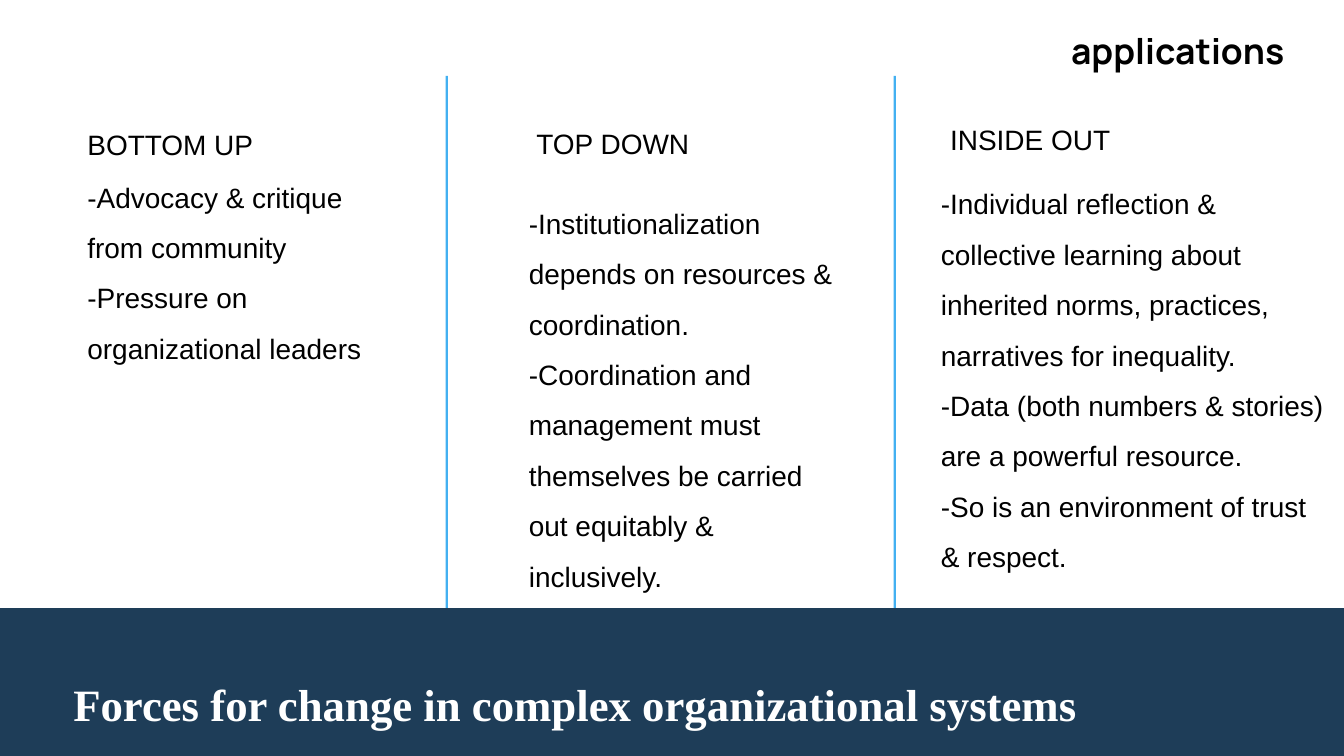
from dataclasses import dataclass
from pptx import Presentation
from pptx.dml.color import RGBColor as Rgb
from pptx.enum.shapes import MSO_SHAPE as Kind
from pptx.enum.text import MSO_ANCHOR as Anchor, MSO_AUTO_SIZE as Fit
from pptx.util import Pt


@dataclass(frozen=True)
class Theme:
    """Colours, fonts and type sizes of the deck."""
    black: Rgb = Rgb.from_string("000000")
    white: Rgb = Rgb.from_string("FFFFFF")
    navy: Rgb = Rgb.from_string("1E3D58")
    sky: Rgb = Rgb.from_string("43B0F1")
    sans: str = "Arial"
    serif: str = "Times New Roman"
    label: str = "Manrope"
    body: int = 30
    tag: int = 38
    title: int = 48


THEME = Theme()
WIDE, HIGH = 1440, 810
RULE_TOP, BAND_TOP = 81.4, 651.6
COLUMNS = [
    ((93.6, 118.8, 332.6), (0, 56.2, 200), "BOTTOM UP",
     ["-Advocacy & critique from community",
      "-Pressure on organizational leaders"]),
    ((566.6, 118.1, 332.6), (8, 84.9, 418.3), "TOP DOWN",
     ["-Institutionalization depends on resources & coordination.",
      "-Coordination and management must themselves be carried out "
      "equitably & inclusively."]),
    ((1008, 113, 414), (10, 69.2, 418.3), "INSIDE OUT",
     ["-Individual reflection & collective learning about inherited norms, "
      "practices, narratives for inequality.",
      "-Data (both numbers & stories) are a powerful resource.",
      "-So is an environment of trust & respect."]),
]


def add_text(slide, box, lines, font, space=1.5, inset=(0, 0), fit=Fit.SHAPE_TO_FIT_TEXT):
    """Place paragraphs that share one font in a wrapped box."""
    frame = slide.shapes.add_textbox(*map(Pt, box)).text_frame
    side, edge = map(Pt, inset)
    look = dict(word_wrap=True, auto_size=fit, vertical_anchor=Anchor.TOP,
                margin_left=side, margin_right=side,
                margin_top=edge, margin_bottom=edge)
    for name, value in look.items():
        setattr(frame, name, value)
    frame.text = "\n".join(lines)
    name, size, color, bold = font
    for para in frame.paragraphs:
        para.line_spacing = space
        for key, value in dict(name=name, size=Pt(size), bold=bold).items():
            setattr(para.font, key, value)
        para.font.color.rgb = color


def add_block(slide, box, color):
    """Place a plain filled rectangle."""
    block = slide.shapes.add_shape(Kind.RECTANGLE, *map(Pt, box))
    block.shadow.inherit = False
    block.fill.solid()
    block.fill.fore_color.rgb = color
    block.line.fill.background()


def add_column(slide, box, shift, head, lines):
    """Place a heading and the points below it."""
    left, top, wide = box
    indent, drop, tall = shift
    font = THEME.sans, THEME.body, THEME.black, False
    add_text(slide, (left + indent, top, 332.6, 36), [head], font)
    add_text(slide, (left, top + drop, wide, tall), lines, font)


def add_rules(slide, top, bottom):
    """Divide the slide into three equal columns."""
    for part in (1, 2):
        add_block(slide, (WIDE * part / 3 - 2.6, top, 2.6, bottom - top), THEME.sky)


def add_band(slide, box):
    """Place the title band at the foot of the slide."""
    left, top, wide, tall = box
    add_block(slide, box, THEME.navy)
    add_text(slide, (left + 78.5, top + 23, 1316.9, 58.3),
             ["Forces for change in complex organizational systems"],
             (THEME.serif, THEME.title, THEME.white, True), 1.88)


def add_tag(slide, box):
    """Place the section label."""
    add_text(slide, box, ["applications"],
             (THEME.label, THEME.tag, THEME.black, True), 1, (7.2, 3.6), Fit.NONE)


def main():
    """Build and save the slide."""
    deck = Presentation()
    deck.slide_width, deck.slide_height = Pt(WIDE), Pt(HIGH)
    slide = deck.slides.add_slide(deck.slide_layouts[6])
    add_rules(slide, RULE_TOP, BAND_TOP)
    for column in COLUMNS:
        add_column(slide, *column)
    add_band(slide, (0, BAND_TOP, WIDE, HIGH - BAND_TOP))
    add_tag(slide, (1140.5, 27.4, 254.9, 53.3))
    deck.save("out.pptx")


if __name__ == "__main__":
    main()
